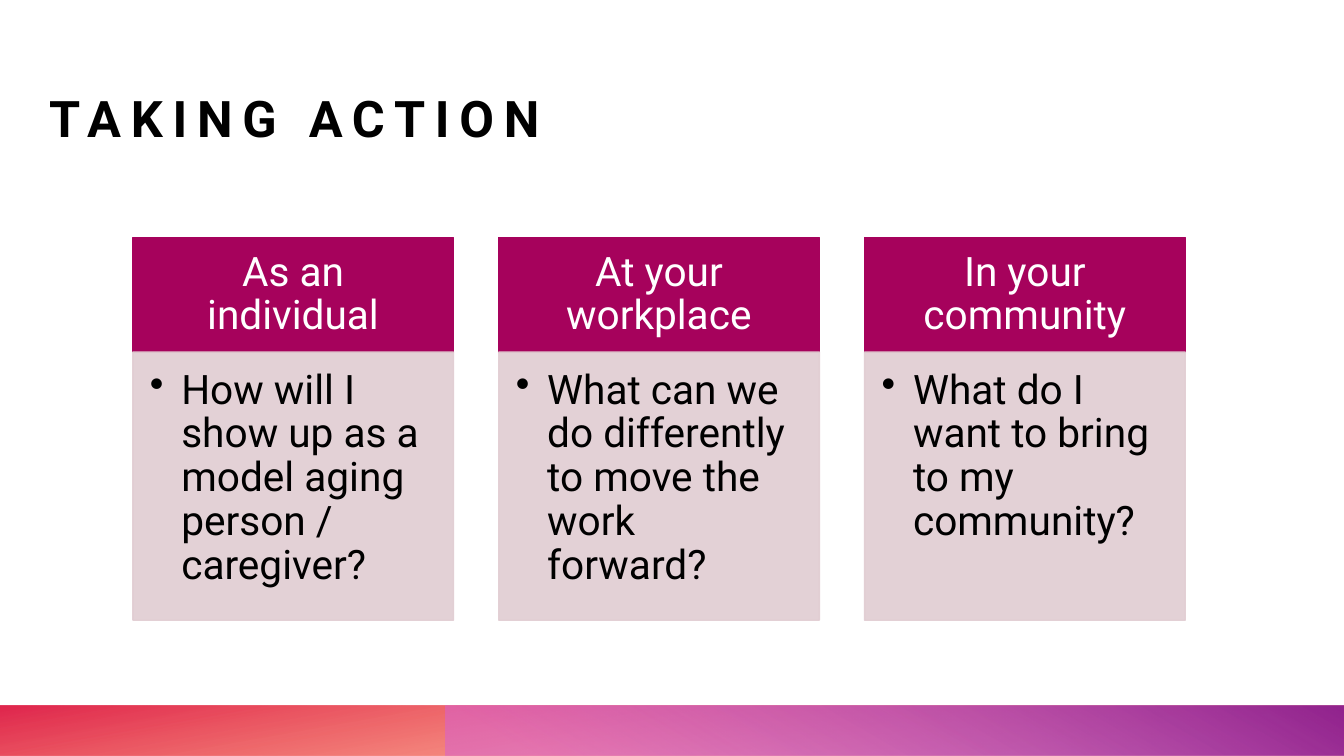
import pptx
import pptx.dml.color
import pptx.enum.shapes
import pptx.enum.text
import pptx.oxml
import pptx.oxml.ns
import pptx.util

Cm = pptx.util.Cm
Pt = pptx.util.Pt
RGBColor = pptx.dml.color.RGBColor
ANCHOR = pptx.enum.text.MSO_ANCHOR
ALIGN = pptx.enum.text.PP_ALIGN

TITLE = "TAKING ACTION"
PANELS = [
    ("As an individual", "How will I show up as a model aging person / caregiver?"),
    ("At your workplace", "What can we do differently to move the work forward?"),
    ("In your community", "What do I want to bring to my community?"),
]

BLACK = RGBColor(0x00, 0x00, 0x00)
WHITE = RGBColor(0xFF, 0xFF, 0xFF)
MAGENTA = RGBColor(0xA6, 0x02, 0x5C)
BLUSH = RGBColor(0xE1, 0xCC, 0xD2)
ORANGE = RGBColor(0xFE, 0x4A, 0x00)
RED = RGBColor(0xDA, 0x00, 0x2F)
PINK = RGBColor(0xD8, 0x61, 0xD4)
PURPLE = RGBColor(0x92, 0x24, 0x8E)

# Footer bars: left, rotation, angle, stops of (position %, colour, opacity %)
FOOTER_BARS = [
    (0, 180, 100, [(14, ORANGE, 28), (100, RED, 85)]),
    (11.22, 0, 240, [(9, PINK, 55), (99, PURPLE, 100)]),
]

# All lengths in centimetres
SLIDE_WIDTH, SLIDE_HEIGHT = 33.87, 19.05
FOOTER_HEIGHT = 1.27
PANEL_LEFT, PANEL_TOP = 3.35, 5.99
PANEL_WIDTH, PANEL_PITCH = 8.08, 9.22
HEADER_HEIGHT, BODY_HEIGHT = 2.88, 6.76
BULLET_INDENT = 0.79

FONT = {"name": "Roboto", "size": Pt(29)}
HEADER = {
    "fill": MAGENTA, "opacity": 100, "text": WHITE, "align": ALIGN.CENTER,
    "anchor": ANCHOR.MIDDLE, "margins": (0.58, 0.33, 0.58, 0.33), "bullet": False,
}
BODY = {
    "fill": BLUSH, "opacity": 90, "text": BLACK, "align": ALIGN.LEFT,
    "anchor": ANCHOR.TOP, "margins": (0.43, 0.43, 0.58, 0.64), "bullet": True,
}


def set_attributes(target, values):
    for name, value in values.items():
        setattr(target, name, value)


def format_frame(frame, anchor, margins):
    sides = ("margin_left", "margin_top", "margin_right", "margin_bottom")
    set_attributes(frame, dict(zip(sides, map(Cm, margins))))
    set_attributes(frame, {
        "word_wrap": True, "vertical_anchor": anchor,
        "auto_size": pptx.enum.text.MSO_AUTO_SIZE.NONE,
    })


def add_rectangle(slide, left, top, width, height):
    shape = slide.shapes.add_shape(
        pptx.enum.shapes.MSO_SHAPE.RECTANGLE, Cm(left), Cm(top), Cm(width), Cm(height))
    shape.shadow.inherit = False
    return shape


def set_opacity(fill_owner, percent):
    """Add transparency to every solid colour below the given element."""
    for colour in fill_owner.iter(pptx.oxml.ns.qn("a:srgbClr")):
        alpha = colour.makeelement(pptx.oxml.ns.qn("a:alpha"), {"val": str(percent * 1000)})
        colour.append(alpha)


def add_footer_bar(slide, left, rotation, angle, stops):
    bar = add_rectangle(slide, left, SLIDE_HEIGHT - FOOTER_HEIGHT,
                        SLIDE_WIDTH - left, FOOTER_HEIGHT)
    bar.rotation = rotation
    bar.line.fill.background()
    properties = bar._element.spPr
    properties.xfrm.set("flipH", "1")
    stop_xml = "".join(
        f'<a:gs pos="{position * 1000}"><a:srgbClr val="{colour}">'
        f'<a:alpha val="{opacity * 1000}"/></a:srgbClr></a:gs>'
        for position, colour, opacity in stops)
    gradient = pptx.oxml.parse_xml(
        f'<a:gradFill {pptx.oxml.ns.nsdecls("a")} rotWithShape="1">'
        f'<a:gsLst>{stop_xml}</a:gsLst>'
        f'<a:lin ang="{angle * 60000}" scaled="0"/></a:gradFill>')
    properties.find(pptx.oxml.ns.qn("a:prstGeom")).addnext(gradient)


def add_bullet(paragraph):
    properties = paragraph._p.get_or_add_pPr()
    indent = Cm(BULLET_INDENT)
    properties.set("marL", str(indent))
    properties.set("indent", str(-indent))
    properties.append(pptx.oxml.parse_xml(
        f'<a:buChar {pptx.oxml.ns.nsdecls("a")} char="•"/>'))


def add_box(slide, text, left, top, height, style):
    box = add_rectangle(slide, left, top, PANEL_WIDTH, height)
    box.fill.solid()
    box.fill.fore_color.rgb = style["fill"]
    box.line.color.rgb = style["fill"]
    box.line.width = Pt(1)
    if style["opacity"] < 100:
        set_opacity(box._element.spPr, style["opacity"])
    format_frame(box.text_frame, style["anchor"], style["margins"])
    paragraph = box.text_frame.paragraphs[0]
    paragraph.text = text
    set_attributes(paragraph, {"alignment": style["align"], "line_spacing": 0.9})
    if style["bullet"]:
        add_bullet(paragraph)
    set_attributes(paragraph.runs[0].font, FONT)
    paragraph.runs[0].font.color.rgb = style["text"]


def add_title(slide):
    title = slide.shapes.title
    set_attributes(title, {
        "left": Cm(1.24), "top": Cm(0.86), "width": Cm(30.76), "height": Cm(2.87)})
    format_frame(title.text_frame, ANCHOR.BOTTOM, (0, 0, 0, 0))
    paragraph = title.text_frame.paragraphs[0]
    paragraph.text = TITLE
    paragraph.alignment = ALIGN.LEFT
    font = paragraph.runs[0].font
    set_attributes(font, {"name": "Roboto", "size": Pt(36), "bold": True})
    font.color.rgb = BLACK
    font._element.set("spc", "700")


def main():
    presentation = pptx.Presentation()
    presentation.slide_width = Cm(SLIDE_WIDTH)
    presentation.slide_height = Cm(SLIDE_HEIGHT)
    slide = presentation.slides.add_slide(presentation.slide_layouts.get_by_name("Title Only"))

    for bar in FOOTER_BARS:
        add_footer_bar(slide, *bar)
    add_title(slide)
    for index, (heading, question) in enumerate(PANELS):
        left = PANEL_LEFT + index * PANEL_PITCH
        add_box(slide, heading, left, PANEL_TOP, HEADER_HEIGHT, HEADER)
        add_box(slide, question, left, PANEL_TOP + HEADER_HEIGHT, BODY_HEIGHT, BODY)

    presentation.save("out.pptx")


if __name__ == "__main__":
    main()
